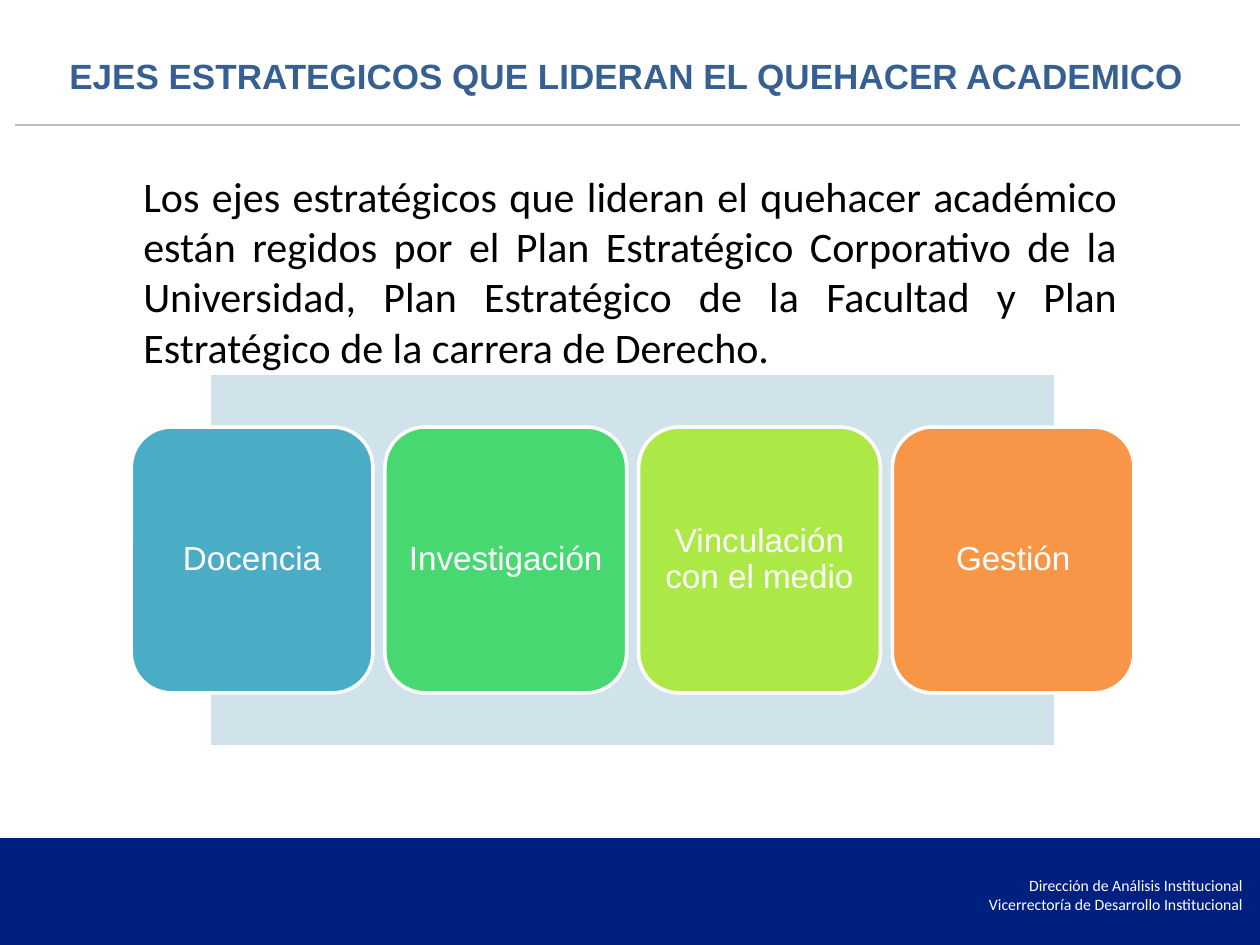
from lxml import etree
from pptx import Presentation
from pptx.dml.color import RGBColor
from pptx.enum.shapes import MSO_CONNECTOR, MSO_SHAPE
from pptx.enum.text import MSO_ANCHOR, MSO_AUTO_SIZE, PP_ALIGN
from pptx.oxml.ns import qn
from pptx.util import Pt

RECT, PROCESS = MSO_SHAPE.RECTANGLE, MSO_SHAPE.FLOWCHART_PROCESS
ROUNDED = MSO_SHAPE.ROUNDED_RECTANGLE
STRAIGHT = MSO_CONNECTOR.STRAIGHT
TOP, MIDDLE = MSO_ANCHOR.TOP, MSO_ANCHOR.MIDDLE
LEFT, CENTER, RIGHT, JUSTIFY = (PP_ALIGN.LEFT, PP_ALIGN.CENTER,
                                PP_ALIGN.RIGHT, PP_ALIGN.JUSTIFY)

COLORS = {
    "white": "FFFFFF", "black": "000000", "rule": "BFBFBF",
    "navy": "002081", "title": "376092", "panel": "D0E3EA",
    "teal": "4BACC6", "green": "47D872", "lime": "ACE946", "orange": "F79646",
}

INTRO = ("Los ejes estratégicos que lideran el quehacer académico están regidos "
         "por el Plan Estratégico Corporativo de la Universidad, Plan Estratégico "
         "de la Facultad y Plan Estratégico de la carrera de Derecho.")
AXES = [("Docencia", "teal"), ("Investigación", "green"),
        ("Vinculación con el medio", "lime"), ("Gestión", "orange")]


def rgb(name):
    return RGBColor.from_string(COLORS[name])


def write(sp, text, size, color, font="Arial", bold=False, align=LEFT,
          anchor=TOP, spacing=1.0, insets=(7.2, 3.6)):
    """Fill a shape with text, one paragraph for each line."""
    tf = sp.text_frame
    tf.word_wrap = True
    tf.auto_size = MSO_AUTO_SIZE.NONE
    tf.vertical_anchor = anchor
    tf.margin_left = tf.margin_right = Pt(insets[0])
    tf.margin_top = tf.margin_bottom = Pt(insets[1])
    for i, line in enumerate(text.split("\n")):
        p = tf.add_paragraph() if i else tf.paragraphs[0]
        p.alignment, p.line_spacing = align, spacing
        p.space_before = p.space_after = Pt(0)
        r = p.add_run()
        r.text = line
        r.font.name, r.font.size, r.font.bold = font, Pt(size), bold
        r.font.color.rgb = rgb(color)


def place(sp, box):
    sp.left, sp.top, sp.width, sp.height = (Pt(v) for v in box)


def add_box(s, kind, box, fill, line=None):
    sp = s.shapes.add_shape(kind, *(Pt(v) for v in box))
    sp.shadow.inherit = False
    sp.fill.solid()
    sp.fill.fore_color.rgb = rgb(fill)
    if line:
        sp.line.color.rgb = rgb(line)
        sp.line.width = Pt(2)
    else:
        sp.line.fill.background()
    return sp


def add_header(s, box):
    x, y, w, h = box
    rule = s.shapes.add_connector(STRAIGHT, Pt(x), Pt(y + h), Pt(x + w), Pt(y + h))
    rule.line.color.rgb = rgb("rule")
    rule.line.width = Pt(1.5)
    etree.SubElement(rule._element.spPr, qn("a:effectLst"))
    title = s.shapes.title
    place(title, (x + 23.8, y, 654.5, h))
    write(title, "EJES ESTRATEGICOS QUE LIDERAN EL QUEHACER ACADEMICO", 20,
          "title", bold=True, spacing=0.9)


def add_intro(s, box):
    body = s.placeholders[1]
    place(body, box)
    write(body, INTRO, 24, "black", font="Calibri", align=JUSTIFY)
    # Plain paragraph: no bullet, no hanging indent
    pPr = body.text_frame.paragraphs[0]._p.get_or_add_pPr()
    pPr.set("marL", "0")
    pPr.set("indent", "0")
    etree.SubElement(pPr, qn("a:buNone"))


def add_axes(s, box):
    x, y, w, h = box
    # Background panel, narrower than the row of cards
    panel_w = w * 0.84
    add_box(s, PROCESS, (x + (w - panel_w) / 2, y, panel_w, h), "panel")
    # Equal cards, centred vertically on the panel
    gap = 6.9
    card_w = (w - gap * (len(AXES) - 1)) / len(AXES)
    card_h = h * 0.72
    for i, (label, fill) in enumerate(AXES):
        card = add_box(s, ROUNDED, (x + i * (card_w + gap), y + (h - card_h) / 2,
                                    card_w, card_h), fill, line="white")
        # The rounded corners already narrow the text area, so insets stay small
        write(card, label, 19, "white", align=CENTER, anchor=MIDDLE,
              spacing=0.9, insets=(4, 4))


def add_footer(s, box):
    x, y, w, h = box
    add_box(s, RECT, box, "navy", line="navy")
    credit = s.shapes.add_textbox(Pt(x + w - 283.7), Pt(y + 17.3), Pt(280.8), Pt(40))
    write(credit, "Dirección de Análisis Institucional\n"
          "Vicerrectoría de Desarrollo Institucional", 9, "white",
          font="Calibri", align=RIGHT)


def main():
    prs = Presentation()
    prs.slide_width, prs.slide_height = Pt(720), Pt(540)
    s = prs.slides.add_slide(prs.slide_layouts[1])
    add_header(s, (8.6, 30.2, 700, 41.2))
    add_intro(s, (74.7, 93.6, 571, 124))
    add_axes(s, (75, 214.5, 573, 211))
    add_footer(s, (0, 479.7, 720, 60.3))
    prs.save("out.pptx")


if __name__ == "__main__":
    main()
